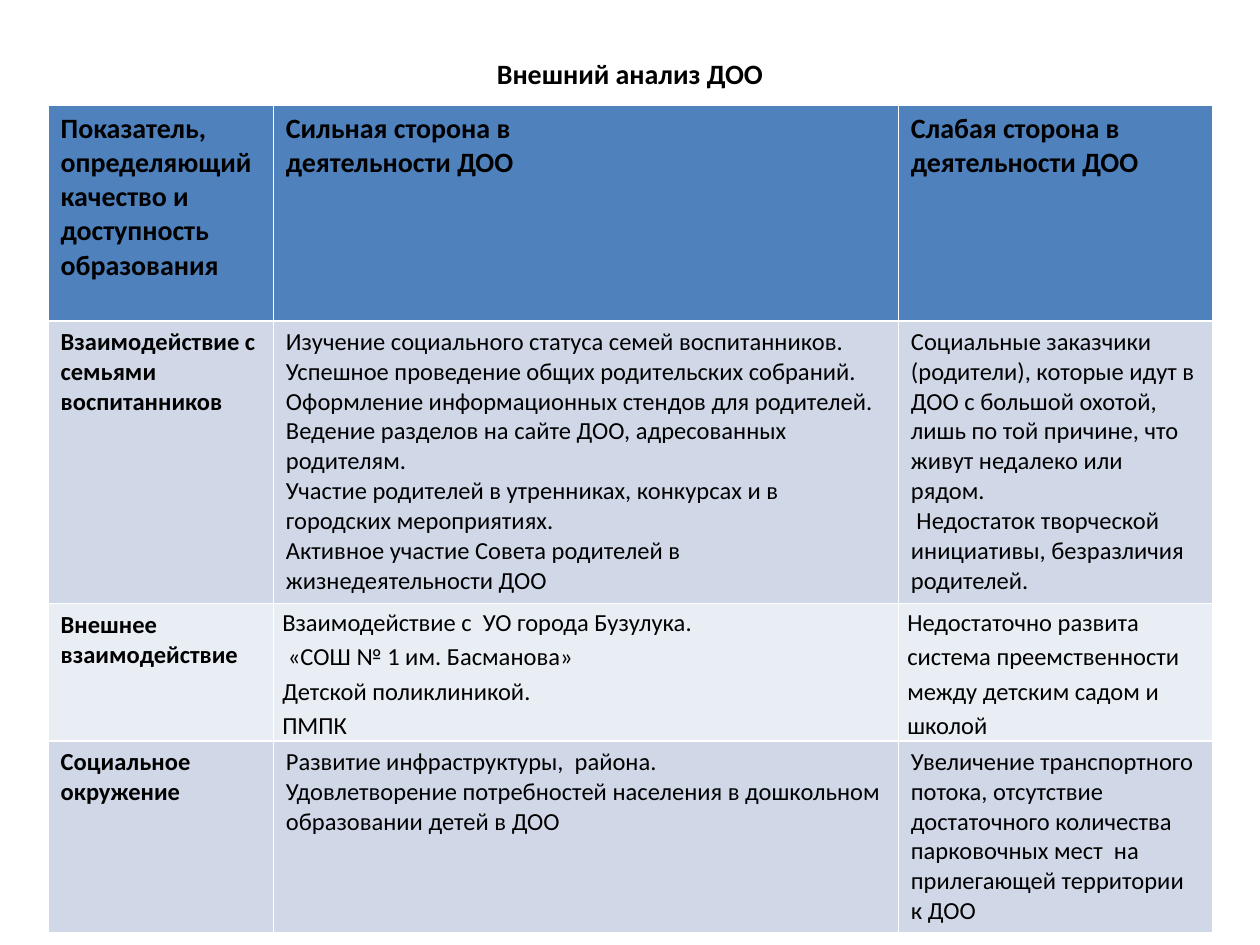
"""Build a slide with a table of the external analysis of a preschool."""
from lxml.etree import SubElement
from pptx import Presentation
from pptx.dml.color import RGBColor
from pptx.enum.text import MSO_ANCHOR, PP_ALIGN
from pptx.oxml.ns import qn
from pptx.util import Cm, Pt

TITLE = "Внешний анализ ДОО"
HEADER = [
    ["Показатель, определяющий\nкачество и доступность\nобразования"],
    ["Сильная сторона в\nдеятельности ДОО"],
    ["Слабая сторона в\nдеятельности ДОО"],
]
FAMILIES = [
    ["Взаимодействие с семьями воспитанников"],
    [
        "Изучение социального статуса семей воспитанников.\n"
        "Успешное проведение общих родительских собраний.\n"
        "Оформление информационных стендов для родителей.\n"
        "Ведение разделов на сайте ДОО, адресованных родителям.",
        "Участие родителей в утренниках, конкурсах и в городских мероприятиях.\n"
        "Активное участие Совета родителей в жизнедеятельности ДОО",
    ],
    [
        "Социальные заказчики (родители), которые идут в ДОО с большой охотой, "
        "лишь по той причине, что живут недалеко или рядом.",
        " Недостаток творческой инициативы, безразличия родителей.",
    ],
]
PARTNERS = [
    ["Внешнее взаимодействие"],
    [
        "Взаимодействие с  УО города Бузулука.",
        " «СОШ № 1 им. Басманова»",
        "Детской поликлиникой.",
        "ПМПК",
    ],
    ["Недостаточно развита\nсистема преемственности\nмежду детским садом и\nшколой"],
]
SURROUNDINGS = [
    ["Социальное окружение"],
    [
        "Развитие инфраструктуры,  района.\n"
        "Удовлетворение потребностей населения в дошкольном\n"
        "образовании детей в ДОО"
    ],
    [
        "Увеличение транспортного\nпотока, отсутствие\n"
        "достаточного количества парковочных мест  на прилегающей территории к ДОО"
    ],
]
ROWS = [HEADER, FAMILIES, PARTNERS, SURROUNDINGS]
ROW_HEIGHTS = [4.35, 5.7, 2.76, 3.85]
COLUMN_WIDTHS = [4.54, 12.6, 6.34]

THEME = {
    "font": "Calibri",
    "text": "000000",
    "header": "4F81BD",
    "bands": ["E9EDF4", "D0D8E8"],
    "heading_size": 16,
    "body_size": 14,
}


def write(frame, paragraphs, *, size, bold=False, align=None, spacing=None):
    """Fill a text frame with formatted paragraphs, keeping line breaks."""
    for index, text in enumerate(paragraphs):
        paragraph = frame.add_paragraph() if index else frame.paragraphs[0]
        paragraph.text = text
        paragraph.alignment = align
        paragraph.line_spacing = spacing
        for run in paragraph.runs:
            run.font.name = THEME["font"]
            run.font.size = Pt(size)
            run.font.bold = bold
            run.font.color.rgb = RGBColor.from_string(THEME["text"])
        for line_break in paragraph._p.findall(qn("a:br")):
            SubElement(line_break, qn("a:rPr"), sz=str(size * 100))


def add_title(slide):
    """Place the heading in the title placeholder."""
    title = slide.shapes.title
    title.left, title.top, title.width, title.height = Cm(1.27), Cm(0.76), Cm(22.86), Cm(1.42)
    title.text_frame.vertical_anchor = MSO_ANCHOR.MIDDLE
    write(title.text_frame, [TITLE], size=THEME["heading_size"], bold=True, align=PP_ALIGN.CENTER)


def add_analysis_table(slide):
    """Add the table with its header and banded rows."""
    table = slide.shapes.add_table(
        len(ROWS), len(COLUMN_WIDTHS), Cm(0.97), Cm(2.12),
        Cm(sum(COLUMN_WIDTHS)), Cm(sum(ROW_HEIGHTS)),
    ).table
    for column, width in zip(table.columns, COLUMN_WIDTHS):
        column.width = Cm(width)
    for row_index, (row, height) in enumerate(zip(ROWS, ROW_HEIGHTS)):
        table.rows[row_index].height = Cm(height)
        is_header = row is HEADER
        fill = THEME["header"] if is_header else THEME["bands"][row_index % 2]
        for column_index, paragraphs in enumerate(row):
            cell = table.cell(row_index, column_index)
            cell.fill.solid()
            cell.fill.fore_color.rgb = RGBColor.from_string(fill)
            is_tight = row is PARTNERS and column_index > 0
            if is_tight:
                cell.vertical_anchor = MSO_ANCHOR.MIDDLE
                cell.margin_left = cell.margin_right = Cm(0.18)
                cell.margin_top = cell.margin_bottom = Cm(0)
            write(
                cell.text_frame, paragraphs,
                size=THEME["heading_size"] if is_header else THEME["body_size"],
                bold=is_header or column_index == 0,
                spacing=1.15 if is_tight else None,
            )


def main():
    """Create and save the presentation."""
    presentation = Presentation()
    presentation.slide_width, presentation.slide_height = Cm(25.4), Cm(19.05)
    slide = presentation.slides.add_slide(presentation.slide_layouts.get_by_name("Title Only"))
    add_title(slide)
    add_analysis_table(slide)
    presentation.save("out.pptx")


if __name__ == "__main__":
    main()
